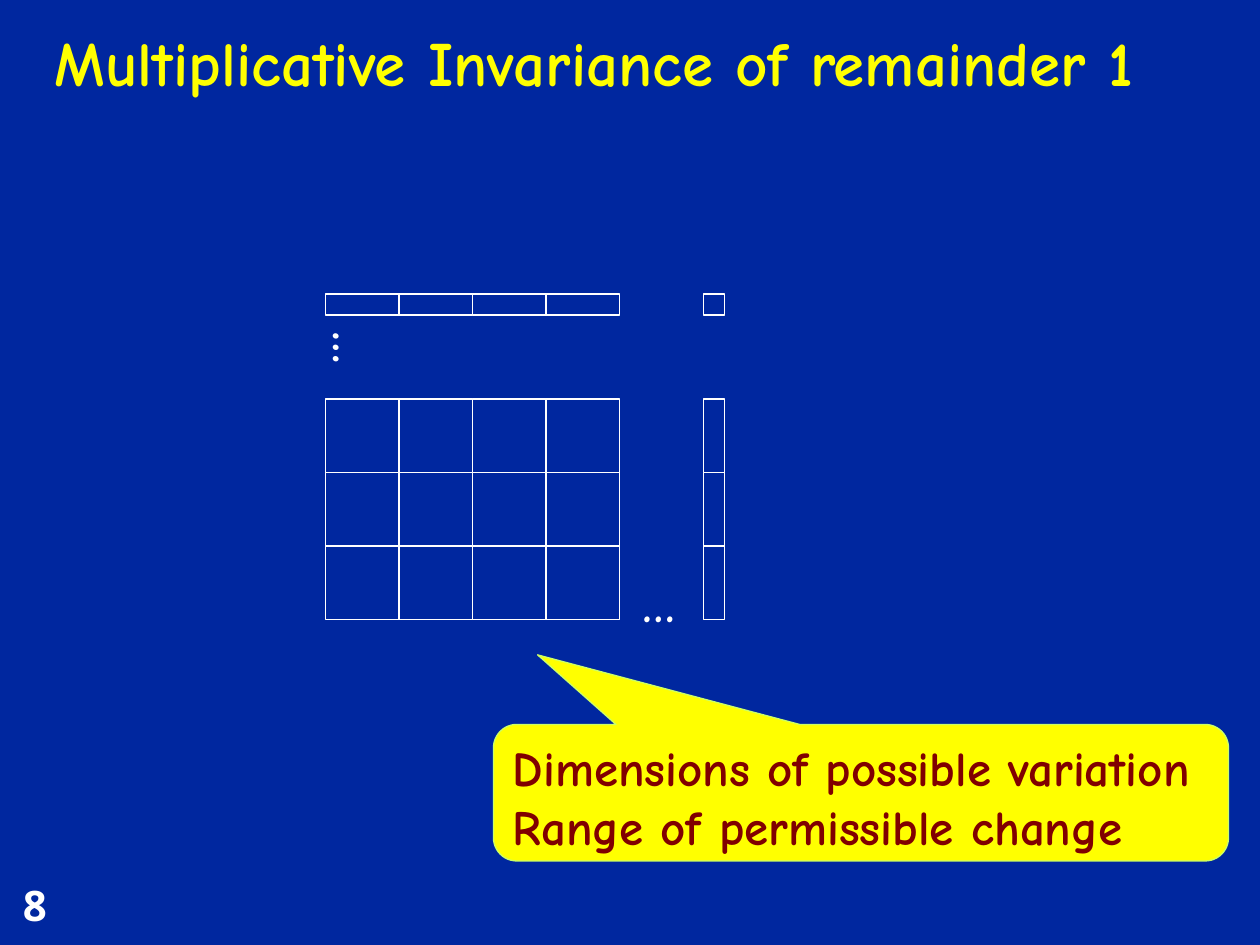
from itertools import product

from pptx import Presentation
from pptx import util as u
from pptx.dml.color import RGBColor
from pptx.enum import shapes, text

BLUE = RGBColor(0x00, 0x27, 0x9F)
WHITE = RGBColor(0xFF, 0xFF, 0xFF)
YELLOW = RGBColor(0xFF, 0xFF, 0x00)
LIME = RGBColor(0xCC, 0xFF, 0x66)
MAROON = RGBColor(0x80, 0x00, 0x00)


class Board:
    """Draws on one slide with a grid of 120 columns and 90 rows."""

    def __init__(self, deck):
        deck.slide_width, deck.slide_height = u.Inches(10), u.Inches(7.5)
        self.unit = deck.slide_width / 120
        self.slide = deck.slides.add_slide(deck.slide_layouts[6])
        self.slide.background.fill.solid()
        self.slide.background.fill.fore_color.rgb = BLUE
        self.home = self.slide.shapes

    def place(self, *cells):
        return [round(cell * self.unit) for cell in cells]

    def letter(self, shape, words, size, color, font="Comic Neue"):
        para = shape.text_frame.paragraphs[0]
        para.text = words
        para.alignment = text.PP_ALIGN.LEFT
        for run in para.runs:
            run.font.size, run.font.name = u.Pt(size), font
            run.font.bold, run.font.color.rgb = True, color

    def label(self, area, words, size, color, font="Comic Neue", wrap=True, turn=0):
        box = self.home.add_textbox(*self.place(*area))
        box.rotation = turn
        box.text_frame.word_wrap = wrap
        self.letter(box, words, size, color, font)
        return box

    def shape(self, kind, area, fill, line, width):
        item = self.home.add_shape(kind, *self.place(*area))
        item.shadow.inherit = False
        item.fill.solid()
        item.fill.fore_color.rgb = fill
        item.line.color.rgb, item.line.width = line, u.Pt(width)
        return item

    def grid(self, cols, rows):
        for (top, high), (left, wide) in product(rows, cols):
            self.shape(shapes.MSO_SHAPE.RECTANGLE, (left, top, wide, high), BLUE, WHITE, 1)

    def matrix(self):
        self.home = self.slide.shapes.add_group_shape().shapes
        cols = [(31 + 7 * i, 7) for i in range(4)] + [(67, 2)]
        rows = [(52 - 7 * i, 7) for i in range(3)] + [(28, 2)]
        self.grid(cols, rows)
        for area, turn in (((60, 54, 6, 6.8), 0), ((30.6, 30, 6, 6.8), 90)):
            self.label(area, "…", 28, WHITE, wrap=False, turn=turn)
        self.home = self.slide.shapes

    def callout(self, area, words, tip):
        item = self.shape(shapes.MSO_SHAPE.ROUNDED_RECTANGULAR_CALLOUT, area, YELLOW, LIME, 0.75)
        for i, value in enumerate(tip):
            item.adjustments[i] = value
        item.text_frame.vertical_anchor = text.MSO_ANCHOR.TOP
        self.letter(item, words, 28, MAROON)


def main():
    deck = Presentation()
    board = Board(deck)
    board.label((1, 83.2, 9, 6), "8", 24, WHITE, "Open Sans")
    title = board.label((4, 2, 116, 8), "Multiplicative Invariance of remainder 1", 36, YELLOW)
    title.text_frame.vertical_anchor = text.MSO_ANCHOR.BOTTOM
    board.matrix()
    board.callout(
        (47, 69, 70, 13),
        "Dimensions of possible variation\vRange of permissible change",
        (-0.44, -1.01, 0.17),
    )
    deck.save("out.pptx")


if __name__ == "__main__":
    main()
